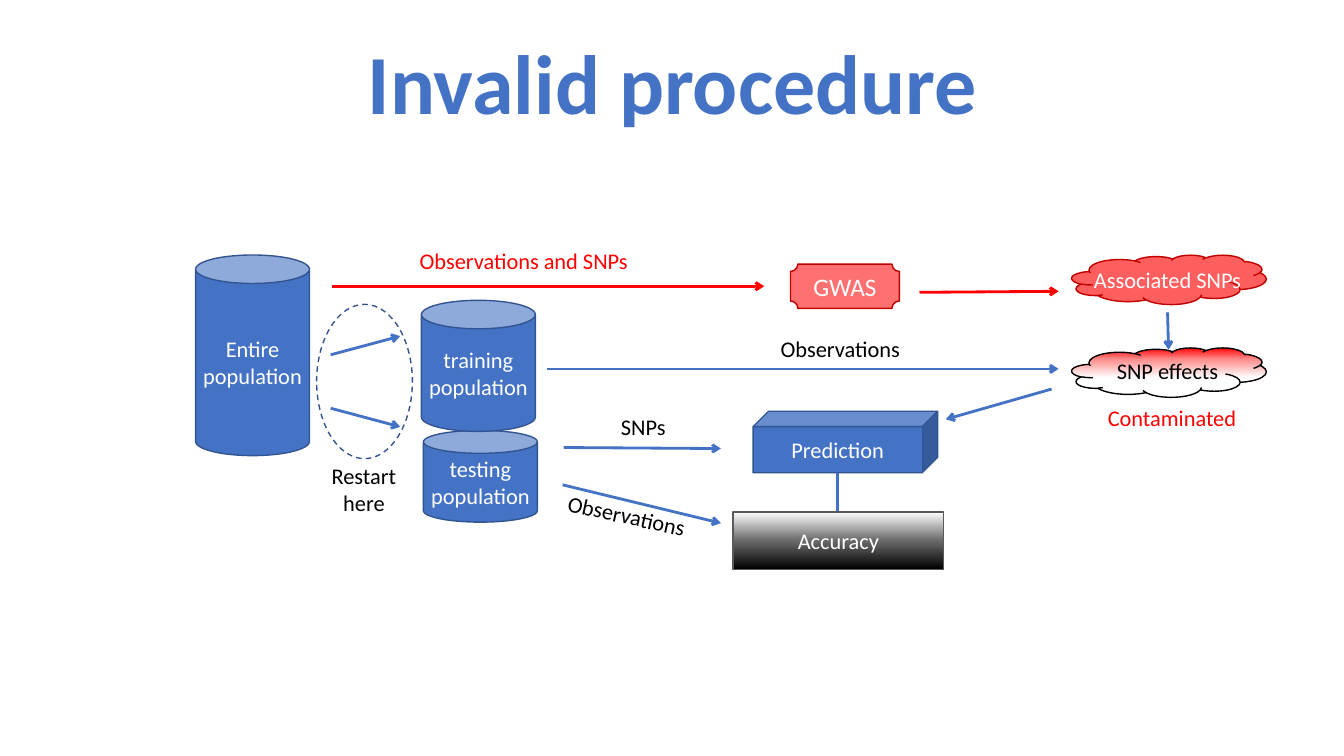
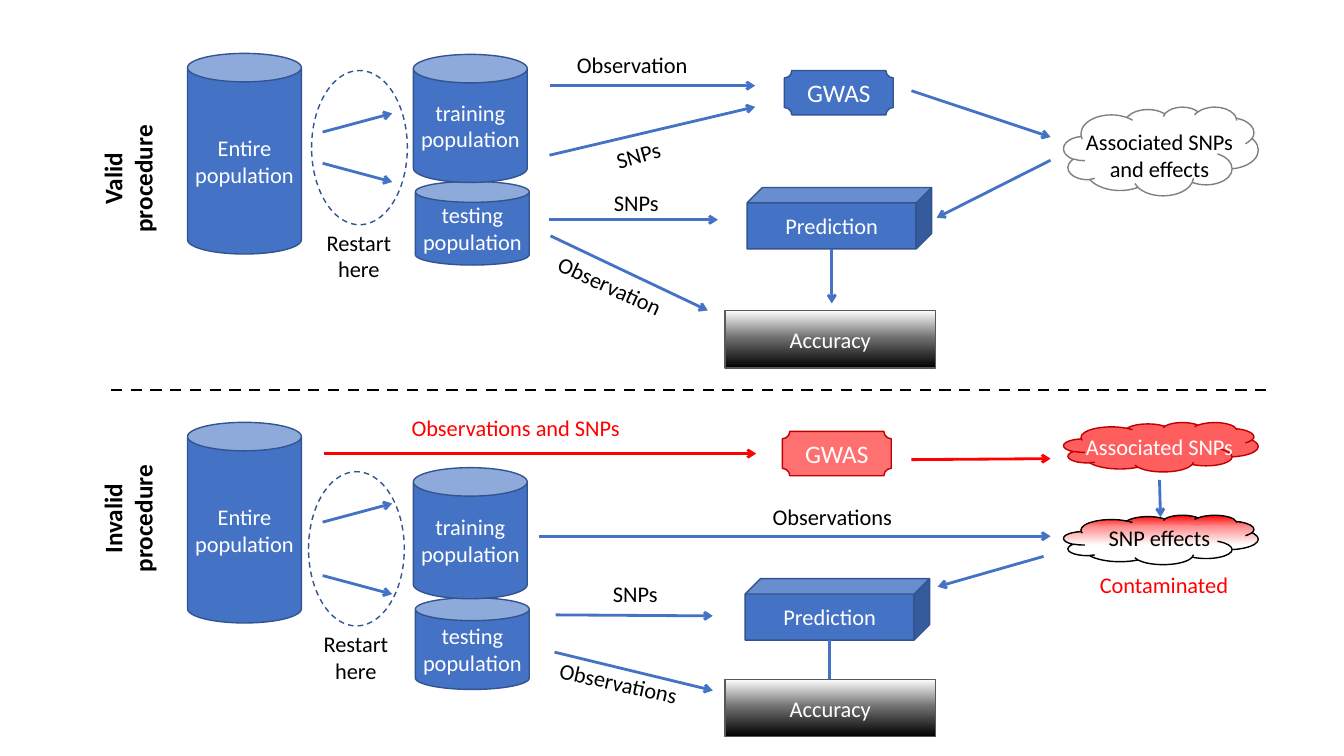
import dataclasses

import lxml.etree
import pptx
import pptx.dml.color
import pptx.enum.dml
import pptx.enum.shapes
import pptx.enum.text
import pptx.oxml.ns
import pptx.util

SHAPES = pptx.enum.shapes.MSO_SHAPE
ANCHOR = pptx.enum.text.MSO_ANCHOR
DASH = pptx.enum.dml.MSO_LINE.DASH
qn = pptx.oxml.ns.qn


@dataclasses.dataclass(frozen=True)
class Theme:
    font: str = "Calibri"
    blue: str = "4472C4"
    navy: str = "325491"
    red: str = "FF0000"
    dark_red: str = "C00000"
    gray: str = "808080"
    dark_gray: str = "595959"
    black: str = "000000"
    white: str = "FFFFFF"
    contaminated: tuple = ((0, "FF0000"), (23, "FF8B8B"), (61, "FFFFFF"), (99, "FFFFFF"))
    accuracy: tuple = ((0, "FFFFFF"), (48, "6E6E6E"), (100, "000000"))
    title_size: int = 60
    heading_size: int = 18
    text_size: int = 16
    outline: int = 1
    stroke: int = 2


THEME = Theme()
SLIDE_WIDTH, SLIDE_HEIGHT = 13.33, 7.5
PANEL_WIDTH, PANEL_HEIGHT = 10.7, 3.2
COLUMNS, ROWS = 107, 32
LABEL_HEIGHT = 3.7
TWO_LINES = 6.4
CAN_WIDTH = 11.3
RING_WIDTH, RING_HEIGHT = 9.5, 15.3
CLOUD_WIDTH = 19.3


def rgb(color):
    return pptx.dml.color.RGBColor.from_string(color)


def format_text(text_frame, size, color, bold=False):
    for paragraph in text_frame.paragraphs:
        paragraph.alignment = pptx.enum.text.PP_ALIGN.CENTER
        for run in paragraph.runs:
            run.font.name = THEME.font
            run.font.size = pptx.util.Pt(size)
            run.font.bold = bold
            run.font.color.rgb = rgb(color)


def paint_solid(shape, color, opacity=100):
    shape.fill.solid()
    shape.fill.fore_color.rgb = rgb(color)
    if opacity < 100:
        color_element = shape._element.spPr.find(qn("a:solidFill"))[0]
        alpha = lxml.etree.SubElement(color_element, qn("a:alpha"))
        alpha.set("val", str(opacity * 1000))


def paint_gradient(shape, stops):
    shape.fill.gradient()
    shape.fill.gradient_angle = 270
    stop_list = next(shape._element.spPr.iter(qn("a:gsLst")))
    for stop in list(stop_list):
        stop_list.remove(stop)
    for position, color in stops:
        stop = lxml.etree.SubElement(stop_list, qn("a:gs"))
        stop.set("pos", str(position * 1000))
        lxml.etree.SubElement(stop, qn("a:srgbClr")).set("val", color)


def draw_line(slide, start, end, color, arrow=True, dash=None):
    points = [pptx.util.Inches(value) for value in (*start, *end)]
    connector = slide.shapes.add_connector(pptx.enum.shapes.MSO_CONNECTOR.STRAIGHT, *points)
    connector.line.color.rgb = rgb(color)
    connector.line.width = pptx.util.Pt(THEME.stroke)
    if dash:
        connector.line.dash_style = dash
    properties = connector._element.spPr
    if arrow:
        tail = lxml.etree.SubElement(properties.find(qn("a:ln")), qn("a:tailEnd"))
        tail.set("type", "arrow")
    lxml.etree.SubElement(properties, qn("a:effectLst"))


@dataclasses.dataclass
class Panel:
    slide: object
    left: float
    top: float

    def point(self, column, row):
        return (self.left + column * PANEL_WIDTH / COLUMNS,
                self.top + row * PANEL_HEIGHT / ROWS)

    def box(self, column, row, columns, rows):
        left, top = self.point(column, row)
        right, bottom = self.point(column + columns, row + rows)
        return [pptx.util.Inches(value) for value in (left, top, right - left, bottom - top)]

    def shape(self, kind, cells, line, fill=None, opacity=100, text="",
              size=THEME.text_size, dash=None):
        shape = self.slide.shapes.add_shape(kind, *self.box(*cells))
        shape.shadow.inherit = False
        if fill is None:
            shape.fill.background()
        elif isinstance(fill, tuple):
            paint_gradient(shape, fill)
        else:
            paint_solid(shape, fill, opacity)
        shape.line.color.rgb = rgb(line)
        shape.line.width = pptx.util.Pt(THEME.outline)
        if dash:
            shape.line.dash_style = dash
        if text:
            frame = shape.text_frame
            frame.text = text
            frame.vertical_anchor = ANCHOR.MIDDLE
            frame.margin_left = frame.margin_right = 0
            frame.margin_top = frame.margin_bottom = 0
            format_text(frame, size, THEME.white)

    def label(self, text, column, row, columns, rows=LABEL_HEIGHT, color=THEME.black,
              rotation=0, size=THEME.text_size, bold=False):
        label = self.slide.shapes.add_textbox(*self.box(column, row, columns, rows))
        label.rotation = rotation
        label.text_frame.word_wrap = True
        label.text_frame.text = text
        format_text(label.text_frame, size, color, bold)

    def arrow(self, start, end, color=THEME.blue):
        draw_line(self.slide, self.point(*start), self.point(*end), color)


def draw_populations(panel, training_row, training_rows, testing_rows, ring, gap):
    testing_row = training_row + training_rows - 0.1
    for text, column, row, rows in (
        ("Entire\npopulation", 0, 0, 19.9),
        ("testing\npopulation", 22.6, testing_row, testing_rows),
        ("training\npopulation", 22.4, training_row, training_rows),
    ):
        panel.shape(SHAPES.CAN, (column, row, CAN_WIDTH, rows), THEME.navy,
                    THEME.blue, text=text)
    ring_column, ring_row = ring
    panel.shape(SHAPES.OVAL, (ring_column, ring_row, RING_WIDTH, RING_HEIGHT),
                THEME.navy, dash=DASH)
    middle = ring_row + RING_HEIGHT / 2
    for side in (-1, 1):
        panel.arrow((13.4, middle + side * gap), (20.3, middle + side * (gap + 1.85)))
    panel.label("Restart\nhere", ring_column - 0.6, ring_row + 15.2, 10.6, TWO_LINES)


def draw_gwas(panel, column, row, line, fill, opacity=100):
    panel.shape(SHAPES.PLAQUE, (column, row, 10.8, 4.4), line, fill, opacity,
                "GWAS", THEME.heading_size)


def draw_cloud(panel, row, rows, text, text_row, text_rows, line, fill=None,
               opacity=100, color=THEME.black):
    panel.shape(SHAPES.CLOUD, (86.9, row, CLOUD_WIDTH, rows), line, fill, opacity)
    panel.label(text, 87.9, text_row, 17, text_rows, color)


def draw_prediction(panel, column, row, arrow_end):
    panel.shape(SHAPES.CUBE, (column, row, 18.3, 6.1), THEME.navy, THEME.blue,
                text="Prediction")
    center = column + 8.4
    panel.arrow((center, row + 6.1), (center, arrow_end))
    panel.shape(SHAPES.RECTANGLE, (53.3, 25.5, 20.9, 5.7), THEME.dark_gray,
                THEME.accuracy, text="Accuracy")


def draw_valid_procedure(panel):
    draw_populations(panel, 0.1, 12.7, 8.3, (12.3, 1.7), 1.55)
    draw_gwas(panel, 59.2, 1.7, THEME.navy, THEME.blue)
    draw_cloud(panel, 5.3, 8.8, "Associated SNPs and effects", 6.9, TWO_LINES, THEME.gray)
    draw_prediction(panel, 55.5, 13.3, 24.8)
    for start, end in (
        ((36, 3.2), (56.3, 3.2)),
        ((35.9, 10.1), (56.3, 5.3)),
        ((35.9, 16.5), (52.6, 16.5)),
        ((36, 18.1), (51.6, 25.5)),
        ((71.8, 3.7), (85.6, 8.3)),
        ((85.6, 10.6), (74.3, 16.3)),
    ):
        panel.arrow(start, end)
    panel.label("Observation", 37.5, -0.7, 13.2)
    panel.label("SNPs", 39.3, 8.2, 10.8, rotation=344.4)
    panel.label("SNPs", 37.9, 13, 13.2)
    panel.label("Observation", 35.3, 21.2, 13.2, rotation=24.6)


def draw_invalid_procedure(panel):
    draw_populations(panel, 4.5, 13, 9.1, (12, 4.9), 2.65)
    draw_gwas(panel, 59, 0.9, THEME.dark_red, THEME.red, 56)
    draw_cloud(panel, 0, 4.9, "Associated SNPs", 0.6, LABEL_HEIGHT, THEME.dark_red,
               THEME.red, 63, THEME.white)
    draw_cloud(panel, 9.2, 4.9, "SNP effects", 9.6, LABEL_HEIGHT, THEME.black,
               THEME.contaminated)
    draw_prediction(panel, 55.3, 15.5, 27)
    for start, end, color in (
        ((13.5, 3.1), (56.4, 3.1), THEME.red),
        ((71.8, 3.7), (85.6, 3.6), THEME.red),
        ((34.9, 11.3), (85.6, 11.3), THEME.blue),
        ((36.5, 19.1), (52.1, 19.2), THEME.blue),
        ((36.4, 22.8), (52.1, 26.6), THEME.blue),
        ((84.9, 13.3), (74.4, 16.3), THEME.blue),
        ((96.4, 5.7), (96.5, 9.4), THEME.blue),
    ):
        panel.arrow(start, end, color)
    panel.label("Observations and SNPs", 20.4, -1.3, 24.3, color=THEME.red)
    panel.label("Observations", 55.8, 7.5, 16.3)
    panel.label("SNPs", 37.8, 15.2, 13.2)
    panel.label("Observations", 35.7, 24, 14.1, rotation=12.6)
    panel.label("Contaminated", 88.7, 14.3, 16.3, color=THEME.red)


def draw_side_heading(panel, text, row):
    panel.label(text, -14.4, row, 17, 7.1, rotation=270, size=THEME.heading_size, bold=True)


def add_invalid_slide(presentation):
    slide = presentation.slides.add_slide(presentation.slide_layouts[5])
    title = slide.shapes.title
    title.left, title.top = pptx.util.Inches(2.17), 0
    title.width, title.height = pptx.util.Inches(9), pptx.util.Inches(1.37)
    frame = title.text_frame
    frame.text = "Invalid procedure"
    frame.auto_size = pptx.enum.text.MSO_AUTO_SIZE.NONE
    frame.vertical_anchor = ANCHOR.BOTTOM
    frame.paragraphs[0].line_spacing = 0.9
    format_text(frame, THEME.title_size, THEME.blue, bold=True)
    draw_invalid_procedure(Panel(slide, 1.94, 2.53))


def add_comparison_slide(presentation):
    slide = presentation.slides.add_slide(presentation.slide_layouts[6])
    valid = Panel(slide, 1.86, 0.53)
    invalid = Panel(slide, 1.86, 4.19)
    draw_valid_procedure(valid)
    draw_side_heading(valid, "Valid procedure", 8.9)
    draw_invalid_procedure(invalid)
    draw_side_heading(invalid, "Invalid procedure", 6)
    draw_line(slide, (1.1, 3.87), (12.61, 3.87), THEME.black, arrow=False, dash=DASH)


def main():
    presentation = pptx.Presentation()
    presentation.slide_width = pptx.util.Inches(SLIDE_WIDTH)
    presentation.slide_height = pptx.util.Inches(SLIDE_HEIGHT)
    add_invalid_slide(presentation)
    add_comparison_slide(presentation)
    presentation.save("out.pptx")


if __name__ == "__main__":
    main()
